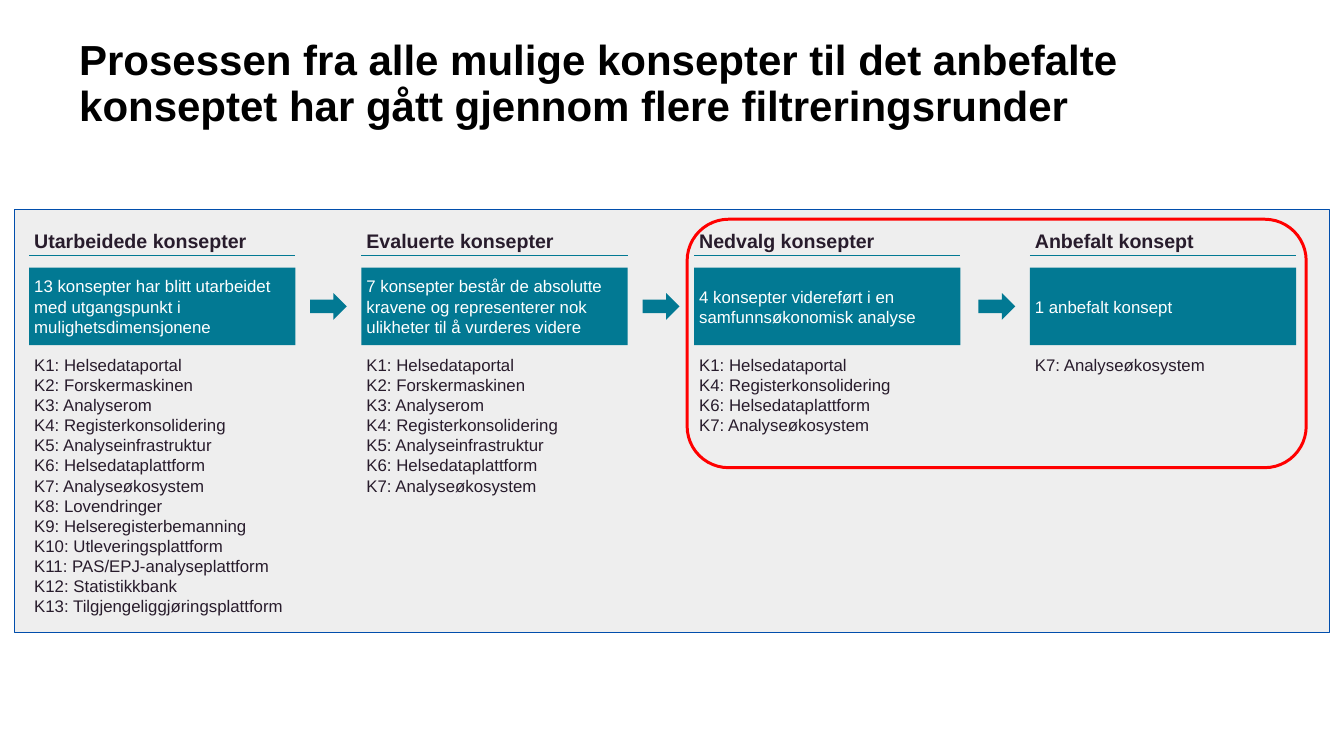
import pptx
import pptx.util
import pptx.dml.color
import pptx.enum.shapes
import pptx.enum.text
import pptx.oxml

# Content
TITLE = ("Prosessen fra alle mulige konsepter til det anbefalte "
         "konseptet har gått gjennom flere filtreringsrunder")
NAMES = ["Helsedataportal", "Forskermaskinen", "Analyserom",
         "Registerkonsolidering", "Analyseinfrastruktur",
         "Helsedataplattform", "Analyseøkosystem", "Lovendringer",
         "Helseregisterbemanning", "Utleveringsplattform",
         "PAS/EPJ-analyseplattform", "Statistikkbank",
         "Tilgjengeliggjøringsplattform"]
# Each step: left edge, heading, summary, numbers of the concepts kept
STEPS = [
    (0.58, "Utarbeidede konsepter",
     "13 konsepter har blitt utarbeidet med utgangspunkt i "
     "mulighetsdimensjonene", range(1, 14)),
    (7.17, "Evaluerte konsepter",
     "7 konsepter består de absolutte kravene og representerer nok "
     "ulikheter til å vurderes videre", range(1, 8)),
    (13.77, "Nedvalg konsepter",
     "4 konsepter videreført i en samfunnsøkonomisk analyse",
     [1, 4, 6, 7]),
    (20.43, "Anbefalt konsept", "1 anbefalt konsept", [7]),
]

# Format and grid
TEAL, DARK, WHITE = "027993", "281C2C", "FFFFFF"
HEAD = {"size": pptx.util.Pt(28), "bold": True}
BODY = {"size": pptx.util.Pt(24), "bold": False}
WIDE, HIGH = 26.66, 15
COL = 5.28                                   # column width
TOP, RULE, BOX, LIST = 4.16, 5.07, 5.31, 6.98  # row tops
BOX_H, LIST_H, HEAD_W, HEAD_H = 1.54, 5.57, 4.45, 0.9
ARROW_W, ARROW_H, BACK = 0.73, 0.53, 1.02    # BACK: arrow to next column

SHAPE = pptx.enum.shapes.MSO_SHAPE
ANCHOR = pptx.enum.text.MSO_ANCHOR
ALIGN = pptx.enum.text.PP_ALIGN


def color(code):
    return pptx.dml.color.RGBColor.from_string(code)


def inches(*nums):
    return [pptx.util.Inches(n) for n in nums]


def write(frame, lines, form, code, anchor):
    frame.word_wrap = True
    frame.vertical_anchor = anchor
    for i, line in enumerate(lines):
        para = frame.paragraphs[0] if i == 0 else frame.add_paragraph()
        para.alignment = ALIGN.LEFT
        run = para.add_run()
        run.text = line
        run.font.name = "Arial"
        run.font.color.rgb = color(code)
        for key, val in form.items():
            setattr(run.font, key, val)


def add_text(slide, place, *args):
    write(slide.shapes.add_textbox(*inches(*place)).text_frame, *args)


def add_form(slide, kind, place, fill=None, line=None, width=1):
    shape = slide.shapes.add_shape(kind, *inches(*place))
    shape.shadow.inherit = False
    if fill:
        shape.fill.solid()
        shape.fill.fore_color.rgb = color(fill)
    else:
        shape.fill.background()
    if line:
        shape.line.color.rgb = color(line)
        shape.line.width = pptx.util.Pt(width)
    else:
        shape.line.fill.background()
    return shape


def add_rule(slide, left, top, wide):
    rule = slide.shapes.add_connector(
        pptx.enum.shapes.MSO_CONNECTOR.STRAIGHT,
        *inches(left, top, left + wide, top))
    rule.line.color.rgb = color(TEAL)
    rule.line.width = pptx.util.Pt(2.25)
    props = rule._element.spPr
    props.append(pptx.oxml.parse_xml(
        '<a:effectLst xmlns:a='
        '"http://schemas.openxmlformats.org/drawingml/2006/main"/>'))


def add_title(slide):
    title = slide.shapes.title
    sides = ("left", "top", "width", "height")
    for side, val in zip(sides, inches(1.57, 0.77, 23.59, 1.83)):
        setattr(title, side, val)
    frame = title.text_frame
    for side in ("left", "top", "right", "bottom"):
        setattr(frame, "margin_" + side, 0)
    form = {"size": pptx.util.Pt(60), "bold": True}
    write(frame, [TITLE], form, "000000", ANCHOR.MIDDLE)
    frame.auto_size = pptx.enum.text.MSO_AUTO_SIZE.NONE
    frame.paragraphs[0].line_spacing = 0.9


def add_step(slide, left, head, note, kept):
    add_text(slide, (left, TOP, HEAD_W, HEAD_H), [head], HEAD, DARK,
             ANCHOR.BOTTOM)
    add_rule(slide, left, RULE, COL)
    box = add_form(slide, SHAPE.RECTANGLE, (left, BOX, COL, BOX_H), TEAL)
    write(box.text_frame, [note], BODY, WHITE, ANCHOR.MIDDLE)
    lines = [f"K{n}: {NAMES[n - 1]}" for n in kept]
    add_text(slide, (left, LIST, COL + 0.14, LIST_H), lines, BODY, DARK,
             ANCHOR.TOP)


def main():
    deck = pptx.Presentation()
    deck.slide_width, deck.slide_height = inches(WIDE, HIGH)
    slide = deck.slides.add_slide(deck.slide_layouts[5])
    add_title(slide)

    # Grey panel, centred across the slide
    edge = 0.29
    add_form(slide, SHAPE.RECTANGLE, (edge, TOP, WIDE - 2 * edge, 8.38),
             "EEEEEE", "014EAC")

    # Steps, with an arrow before each but the first
    for i, step in enumerate(STEPS):
        add_step(slide, *step)
        if i:
            mid = BOX + (BOX_H - ARROW_H) / 2
            add_form(slide, SHAPE.RIGHT_ARROW,
                     (step[0] - BACK, mid, ARROW_W, ARROW_H), TEAL)

    # Red frame round the last two steps
    add_form(slide, SHAPE.ROUNDED_RECTANGLE, (13.63, 4.35, 12.28, 4.93),
             line="FF0000", width=4.25)
    deck.save("out.pptx")


if __name__ == "__main__":
    main()
